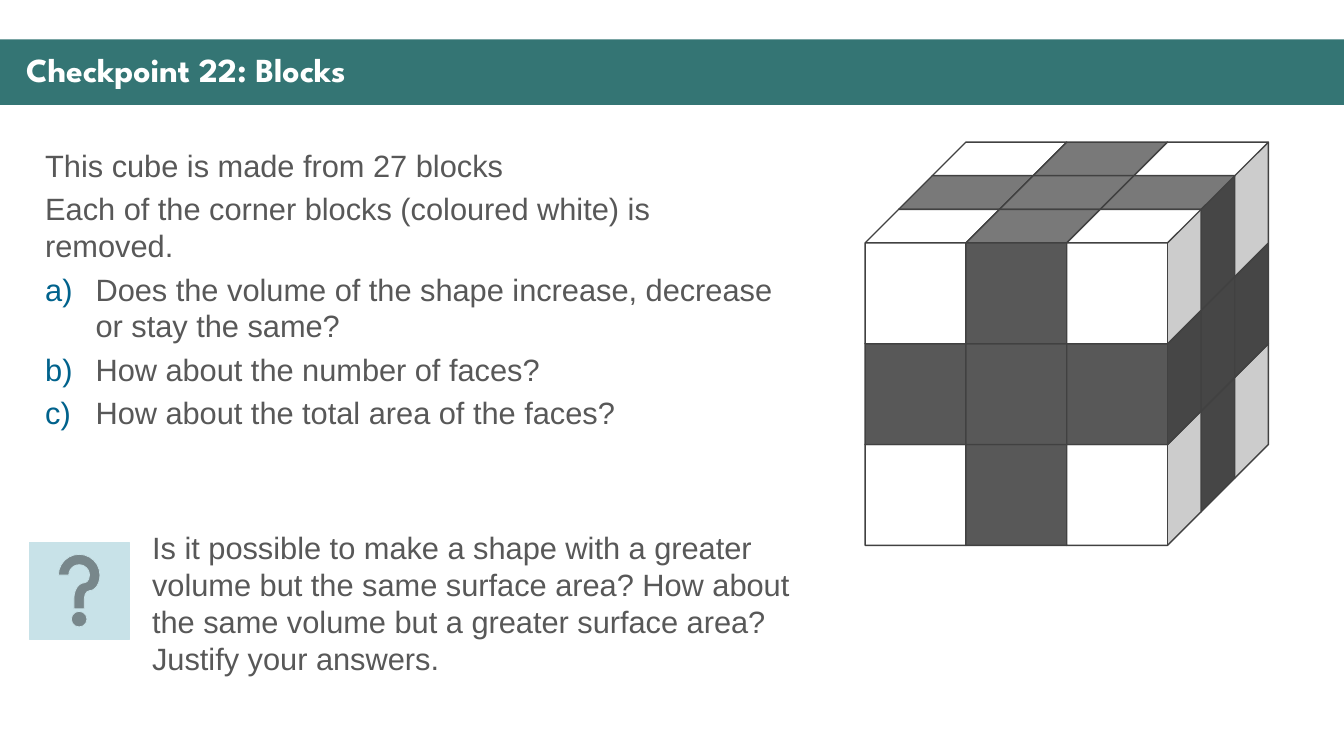
from itertools import product

from lxml import etree
from pptx import Presentation
from pptx.dml.color import RGBColor
from pptx.enum.shapes import MSO_SHAPE
from pptx.enum.text import MSO_ANCHOR
from pptx.oxml.ns import qn
from pptx.util import Inches, Pt

RECT = MSO_SHAPE.RECTANGLE
CUBE = MSO_SHAPE.CUBE
HELP = MSO_SHAPE.ACTION_BUTTON_HELP
MIDDLE = MSO_ANCHOR.MIDDLE

TEAL, BLUE, PALE = "347574", "00628C", "C8E2E8"
GREY, DARK, WHITE = "585858", "414141", "FFFFFF"

INTRO = [
    "This cube is made from 27 blocks",
    "Each of the corner blocks (coloured white) is removed.",
]
PARTS = [
    "Does the volume of the shape increase, decrease or stay the same?",
    "How about the number of faces?",
    "How about the total area of the faces?",
]
EXTRA = ("Is it possible to make a shape with a greater volume but the same "
         "surface area? How about the same volume but a greater surface area? "
         "Justify your answers.")


def color(code):
    return RGBColor.from_string(code)


def add_box(shapes, kind, box, fill, line=None, width=1):
    shape = shapes.add_shape(kind, *map(Inches, box))
    shape.shadow.inherit = False
    shape.fill.solid()
    shape.fill.fore_color.rgb = color(fill)
    if line:
        shape.line.color.rgb = color(line)
        shape.line.width = Pt(width)
    else:
        shape.line.fill.background()


def add_frame(slide, box):
    frame = slide.shapes.add_textbox(*map(Inches, box)).text_frame
    frame.word_wrap = True
    return frame


def add_run(para, text, size=22, face="Arial", ink=GREY, bold=False):
    run = para.add_run()
    run.text = text
    run.font.size = Pt(size)
    run.font.name = face
    run.font.bold = bold
    run.font.color.rgb = color(ink)


def add_letter(para):
    """Number the paragraph a), b), c) with a hanging indent."""
    props = para._p.get_or_add_pPr()
    props.set("marL", str(Inches(0.5)))
    props.set("indent", str(-Inches(0.5)))
    tint = etree.SubElement(props, qn("a:buClr"))
    etree.SubElement(tint, qn("a:srgbClr"), val=BLUE)
    etree.SubElement(props, qn("a:buAutoNum"), type="alphaLcParenR")


def add_title(slide, left, top, width, height):
    add_box(slide.shapes, RECT, (left, top, width, height), TEAL)
    frame = add_frame(slide, (left + 0.16, top + 0.09, width - 0.29, height - 0.18))
    frame.vertical_anchor = MIDDLE
    para = frame.paragraphs[0]
    para.line_spacing = 0.9
    add_run(para, "Checkpoint 22: Blocks", 24, "League Spartan", WHITE, True)


def add_task(slide, *box):
    frame = add_frame(slide, box)
    for i, text in enumerate(INTRO + PARTS):
        para = frame.add_paragraph() if i else frame.paragraphs[0]
        if i >= len(INTRO):
            add_letter(para)
        if i:
            para.space_before = Pt(4.4)
        add_run(para, text)


def add_blocks(slide, left, top, size):
    """Stack 3 x 3 x 3 blocks from back to front, bottom to top, left to right."""
    step, depth = size / 4, size / 12
    edge = step + depth
    group = slide.shapes.add_group_shape()
    for back, row, col in product((2, 1, 0), (2, 1, 0), (0, 1, 2)):
        x = left + col * step + back * depth
        y = top + row * step + (2 - back) * depth
        corner = 1 not in (back, row, col)
        add_box(group.shapes, CUBE, (x, y, edge, edge),
                WHITE if corner else GREY, DARK)


def add_extra(slide, left, top, width, height):
    add_box(slide.shapes, HELP, (left, top + 0.18, 0.99, 0.96), PALE, PALE, 0.5)
    frame = add_frame(slide, (left + 1.12, top, width - 1.12, height))
    add_run(frame.paragraphs[0], EXTRA)


def main():
    deck = Presentation()
    deck.slide_width, deck.slide_height = Inches(13.33), Inches(7.5)
    slide = deck.slides.add_slide(deck.slide_layouts[6])
    add_title(slide, 0, 0.39, 13.33, 0.65)
    add_task(slide, 0.35, 1.41, 7.5, 2.99)
    add_blocks(slide, 8.58, 1.41, 4)
    add_extra(slide, 0.29, 5.2, 7.84, 1.58)
    deck.save("out.pptx")


if __name__ == "__main__":
    main()
